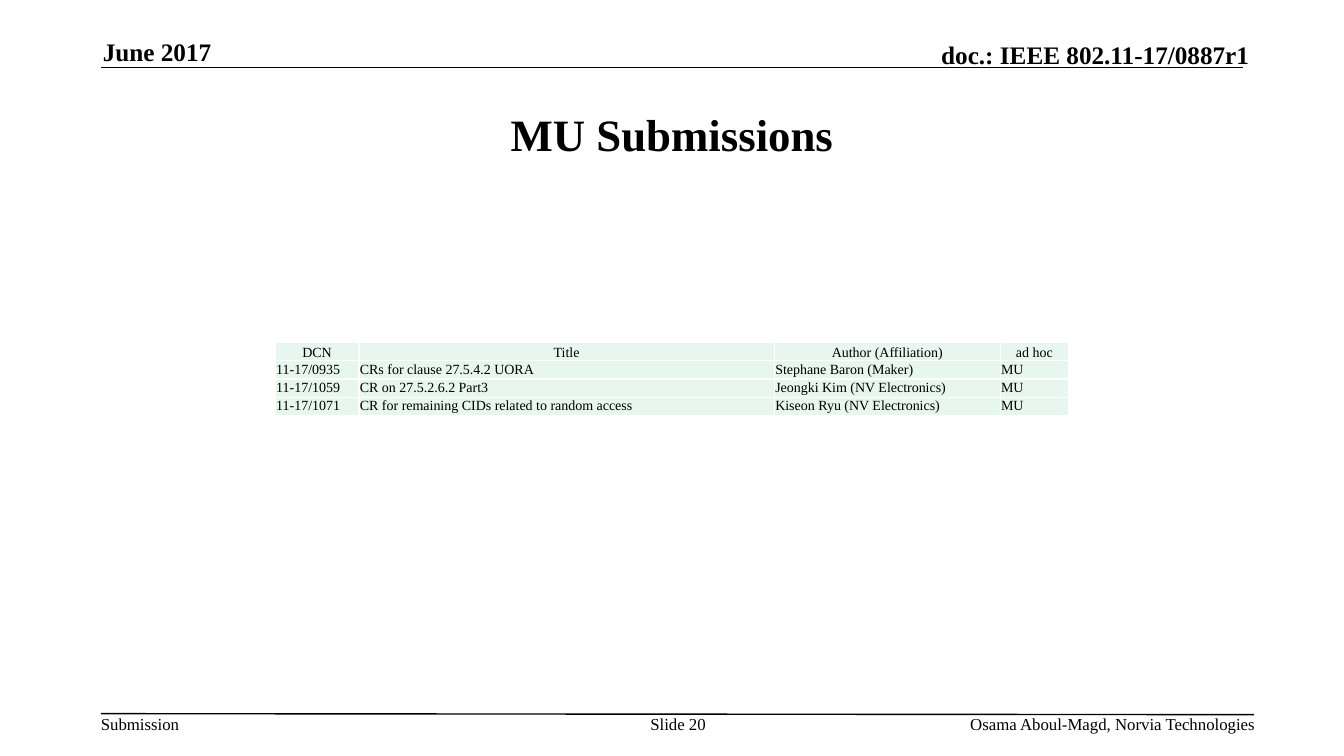
from lxml.etree import SubElement
from pptx import Presentation
from pptx.dml.color import RGBColor
from pptx.enum.shapes import MSO_CONNECTOR as Connector
from pptx.enum.text import MSO_ANCHOR as Anchor, MSO_AUTO_SIZE as AutoSize, PP_ALIGN as Align
from pptx.oxml.ns import qn
from pptx.util import Inches, Pt

FONT = "Times New Roman"
COLORS = {"ink": "000000", "cell": "E7F6EF", "border": "FFFFFF"}
WIDTH, HEIGHT = 13.33, 7.5
MARGIN = 1
FOOTER_TOP = 7.08

TITLE = "MU Submissions"
RULES = [
    (MARGIN, 0.67, WIDTH - MARGIN, 0.67),
    (MARGIN, FOOTER_TOP, 12.44, FOOTER_TOP + 0.01),
]
HEADER = dict(size=18, bold=True, anchor=Anchor.BOTTOM)
FOOTER = dict(size=12)
LABELS = [
    ("June 2017", (1.02, 0.36, 2.73, 0.3), dict(HEADER)),
    ("doc.: IEEE 802.11-17/0887r1", (7.29, 0.39, 5.1, 0.3), dict(HEADER, align=Align.RIGHT)),
    ("Submission", (MARGIN, FOOTER_TOP, 0.79, 0.2), dict(FOOTER, wrap=False)),
    ("Slide 20", (6.34, FOOTER_TOP, 0.77, 0.4), dict(FOOTER, align=Align.CENTER)),
    ("Osama Aboul-Magd, Norvia Technologies", (7.81, FOOTER_TOP, 4.64, 0.2),
     dict(FOOTER, align=Align.RIGHT)),
]
SUBMISSIONS = [
    ("DCN", "Title", "Author (Affiliation)", "ad hoc"),
    ("11-17/0935", "CRs for clause 27.5.4.2 UORA", "Stephane Baron (Maker)", "MU"),
    ("11-17/1059", "CR on 27.5.2.6.2 Part3", "Jeongki Kim (NV Electronics)", "MU"),
    ("11-17/1071", "CR for remaining CIDs related to random access",
     "Kiseon Ryu (NV Electronics)", "MU"),
]
TABLE_LEFT, TABLE_TOP = 2.73, 3.4
COLUMNS = [0.83, 4.12, 2.24, 0.68]
ROW = 0.18


def write(frame, text, size=10, bold=False, align=Align.LEFT):
    para = frame.paragraphs[0]
    para.alignment = align
    span = para.add_run()
    span.text = text
    span.font.name = FONT
    span.font.size = Pt(size)
    span.font.bold = bold
    span.font.color.rgb = RGBColor.from_string(COLORS["ink"])


def set_margins(holder, left, top, right, bottom):
    holder.margin_left, holder.margin_top = Inches(left), Inches(top)
    holder.margin_right, holder.margin_bottom = Inches(right), Inches(bottom)


def add_label(page, text, place, anchor=Anchor.TOP, wrap=True, **style):
    frame = page.shapes.add_textbox(*map(Inches, place)).text_frame
    frame.word_wrap = wrap
    frame.vertical_anchor = anchor
    set_margins(frame, 0, 0, 0, 0)
    write(frame, text, **style)


def add_rule(page, ends):
    rule = page.shapes.add_connector(Connector.STRAIGHT, *map(Inches, ends))
    rule.line.color.rgb = RGBColor.from_string(COLORS["ink"])
    rule.line.width = Pt(1)
    SubElement(rule.element.spPr, qn("a:effectLst"))


def format_title(page):
    title = page.shapes.title
    title.left, title.top = Inches(MARGIN), Inches(0.75)
    title.width, title.height = Inches(WIDTH - 2 * MARGIN), Inches(1.16)
    frame = title.text_frame
    frame.auto_size = AutoSize.NONE
    frame.vertical_anchor = Anchor.MIDDLE
    set_margins(frame, 0.1, 0.05, 0.1, 0.05)
    write(frame, TITLE, size=32, bold=True, align=Align.CENTER)


def add_borders(cell):
    properties = cell._tc.get_or_add_tcPr()
    for position, side in enumerate(("lnL", "lnR", "lnT", "lnB")):
        border = SubElement(properties, qn(f"a:{side}"), w=str(Pt(1)))
        fill = SubElement(border, qn("a:solidFill"))
        SubElement(fill, qn("a:srgbClr"), val=COLORS["border"])
        properties.insert(position, border)


def add_submissions(page):
    size = len(SUBMISSIONS), len(COLUMNS)
    place = TABLE_LEFT, TABLE_TOP, sum(COLUMNS), ROW * len(SUBMISSIONS)
    table = page.shapes.add_table(*size, *map(Inches, place)).table
    table.first_row = table.horz_banding = False
    for column, width in zip(table.columns, COLUMNS):
        column.width = Inches(width)
    for index, entries in enumerate(SUBMISSIONS):
        table.rows[index].height = Inches(ROW)
        heading = index == 0
        for cell, text in zip(table.rows[index].cells, entries):
            set_margins(cell, 0.01, 0.01, 0.01, 0)
            cell.vertical_anchor = Anchor.BOTTOM if heading else Anchor.TOP
            cell.fill.solid()
            cell.fill.fore_color.rgb = RGBColor.from_string(COLORS["cell"])
            add_borders(cell)
            write(cell.text_frame, text, align=Align.CENTER if heading else Align.LEFT)


def main():
    deck = Presentation()
    deck.slide_width, deck.slide_height = Inches(WIDTH), Inches(HEIGHT)
    page = deck.slides.add_slide(deck.slide_layouts[5])
    format_title(page)
    for ends in RULES:
        add_rule(page, ends)
    for text, place, style in LABELS:
        add_label(page, text, place, **style)
    add_submissions(page)
    deck.save("out.pptx")


if __name__ == "__main__":
    main()
